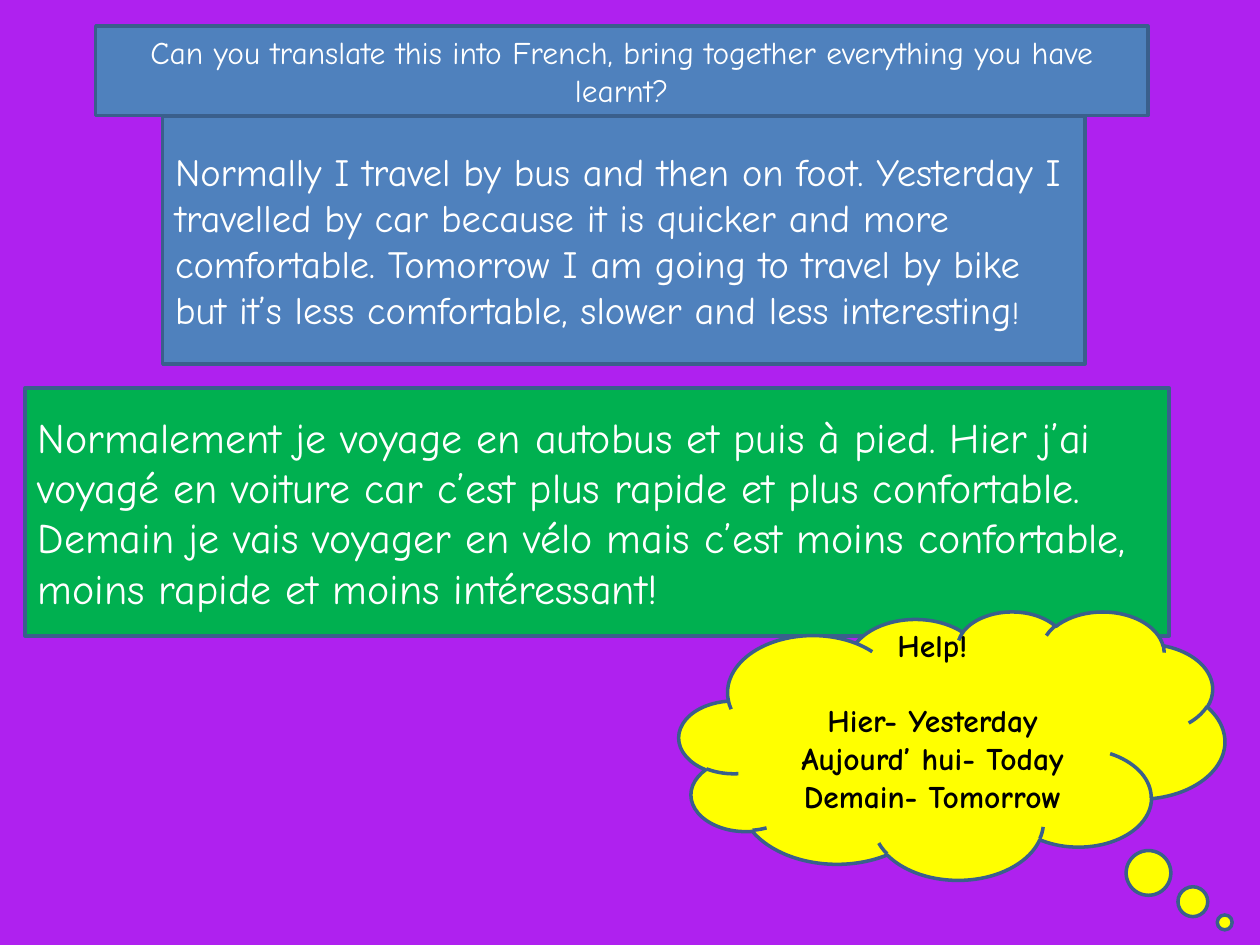
from pptx import Presentation
from pptx.dml.color import RGBColor
from pptx.enum.shapes import MSO_SHAPE
from pptx.enum.text import MSO_ANCHOR, PP_ALIGN
from pptx.util import Cm, Pt

COLOURS = {
    "background": "AF21EF",
    "english": "4F81BD",
    "french": "00B050",
    "help": "FFFF00",
    "outline": "3A5F8C",
    "light": "FFFFFF",
    "dark": "000000",
}


def colour(name):
    return RGBColor.from_string(COLOURS[name])


def add_panel(preset, place, fill, paragraphs, align, font_format):
    panel = slide.shapes.add_shape(preset, *(Cm(length) for length in place))
    panel.shadow.inherit = False
    panel.fill.solid()
    panel.fill.fore_color.rgb = colour(fill)
    panel.line.color.rgb = colour("outline")
    panel.line.width = Pt(2)
    frame = panel.text_frame
    frame.word_wrap = True
    frame.vertical_anchor = MSO_ANCHOR.MIDDLE
    for index, runs in enumerate(paragraphs):
        paragraph = frame.add_paragraph() if index else frame.paragraphs[0]
        paragraph.alignment = align
        for wording, size, ink in runs:
            run = paragraph.add_run()
            run.text = wording
            run.font.color.rgb = colour(ink)
            for key, value in {**font_format, "size": Pt(size)}.items():
                setattr(run.font, key, value)
    return panel


presentation = Presentation()
presentation.slide_width = Cm(25.4)
presentation.slide_height = Cm(19.05)
slide = presentation.slides.add_slide(presentation.slide_layouts[6])
slide.background.fill.solid()
slide.background.fill.fore_color.rgb = colour("background")

regular = {"name": "Comic Neue", "bold": False}
strong = {"name": "Comic Neue", "bold": True}

question = "Can you translate this into French, bring together everything you have learnt?"
english = (
    "Normally I travel by bus and then on foot. Yesterday I travelled by car "
    "because it is quicker and more comfortable. Tomorrow I am going to travel "
    "by bike but it’s less comfortable, slower and less interesting"
)
french = (
    "Normalement je voyage en autobus et puis à pied. Hier j’ai voyagé en voiture "
    "car c’est plus rapide et plus confortable. Demain je vais voyager en vélo "
    "mais c’est moins confortable, moins rapide et moins intéressant!"
)
hints = ["Help!", "Hier- Yesterday", "Aujourd’ hui- Today", "Demain- Tomorrow"]

panels = [
    ((1.93, 0.53, 21.21, 1.8), "english", [(question, 18, "light")], PP_ALIGN.CENTER),
    ((3.28, 2.34, 18.59, 5), "english", [(english, 22, "light"), ("!", 18, "light")], PP_ALIGN.LEFT),
    ((0.51, 7.82, 23.06, 5), "french", [(french, 24, "light")], PP_ALIGN.LEFT),
]
for place, fill, runs, align in panels:
    add_panel(MSO_SHAPE.RECTANGLE, place, fill, [runs], align, regular)

help_cloud = add_panel(
    MSO_SHAPE.CLOUD_CALLOUT,
    (13.69, 12.32, 11, 5.41),
    "help",
    [[(hint, 18, "dark")] for hint in hints],
    PP_ALIGN.CENTER,
    strong,
)
help_cloud.adjustments[0] = 0.5
help_cloud.adjustments[1] = 0.66
help_cloud.text_frame.margin_bottom = Cm(0.89)
help_cloud.text_frame.paragraphs[1].space_before = Pt(21.6)

presentation.save("out.pptx")
